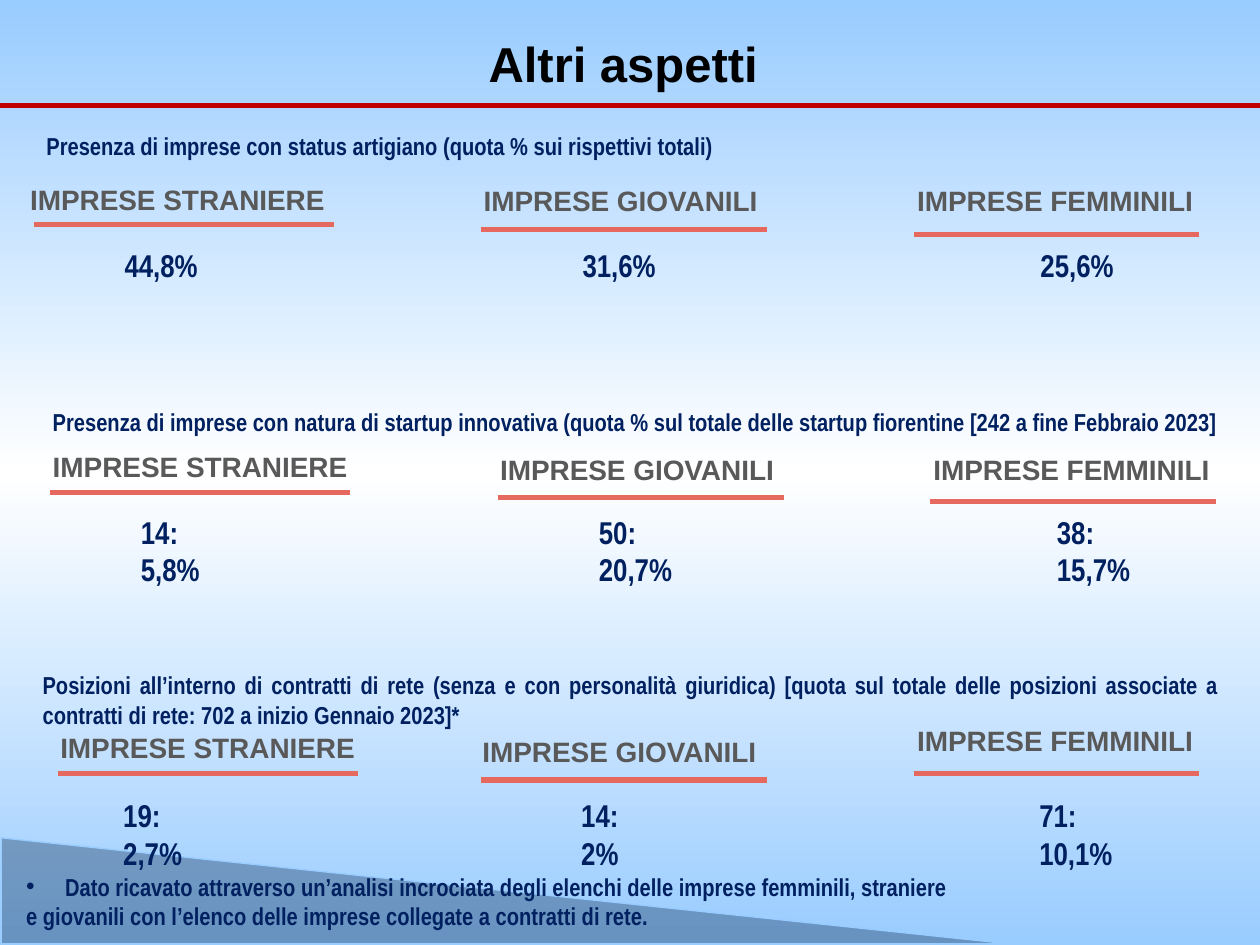
from copy import deepcopy
from dataclasses import dataclass
from lxml.etree import SubElement
from pptx import Presentation
from pptx.dml.color import RGBColor
from pptx.enum.shapes import MSO_CONNECTOR, MSO_SHAPE
from pptx.enum.text import MSO_ANCHOR, MSO_AUTO_SIZE, PP_ALIGN
from pptx.oxml.ns import qn
from pptx.slide import Slide
from pptx.util import Inches, Pt

COLUMNS, ROWS = 100, 75
WIDTH, HEIGHT = Inches(10), Inches(7.5)


def color(value):
    return RGBColor.from_string(value)


def across(columns):
    return round(WIDTH * columns / COLUMNS)


def down(rows):
    return round(HEIGHT * rows / ROWS)


@dataclass
class Board:
    page: Slide
    sky: str = "99CCFF"
    white: str = "FFFFFF"
    navy: str = "002060"
    gray: str = "595959"
    coral: str = "E6695F"
    red: str = "C00000"
    black: str = "000000"
    wedge_fill: str = "17375E"
    sans: str = "Arial"
    narrow: str = "Arial Narrow"

    def background(self):
        fill = self.page.background.fill
        fill.gradient()
        fill.gradient_angle = 90
        stops = self.page.element.find(".//" + qn("a:gsLst"))
        stops.insert(1, deepcopy(stops[0]))
        for stop, position, value in zip(
            fill.gradient_stops, (0, 0.5, 1), (self.sky, self.white, self.sky)
        ):
            stop.position = position
            stop.color.rgb = color(value)

    def wedge(self, left, top, width, height):
        shape = self.page.shapes.add_shape(
            MSO_SHAPE.RIGHT_TRIANGLE, across(left), down(top), across(width), down(height)
        )
        shape.shadow.inherit = False
        shape.fill.solid()
        shape.fill.fore_color.rgb = color(self.wedge_fill)
        tint = shape.element.spPr.find(qn("a:solidFill"))[0]
        SubElement(tint, qn("a:alpha"), val="38000")
        shape.line.color.rgb = color(self.sky)
        shape.line.width = Pt(0.75)

    def rule(self, left, top, width, value):
        line = self.page.shapes.add_connector(
            MSO_CONNECTOR.STRAIGHT, across(left), down(top), across(left + width), down(top)
        )
        line.line.color.rgb = color(value)
        line.line.width = Pt(3)
        SubElement(line.element.spPr, qn("a:effectLst"))

    def text(self, place, lines, size, font, value, align=PP_ALIGN.JUSTIFY, bullet=False):
        left, top, width, height = place
        box = self.page.shapes.add_textbox(across(left), down(top), across(width), down(height))
        frame = box.text_frame
        frame.word_wrap = True
        frame.auto_size = MSO_AUTO_SIZE.SHAPE_TO_FIT_TEXT
        for index, line in enumerate(lines):
            para = frame.add_paragraph() if index else frame.paragraphs[0]
            para.alignment = align
            if bullet and index == 0:
                self.bullet(para)
            span = para.add_run()
            span.text = line
            span.font.name = font
            span.font.size = Pt(size)
            span.font.bold = True
            span.font.color.rgb = color(value)
        return box

    def bullet(self, para):
        props = para._p.get_or_add_pPr()
        props.set("marL", str(across(3.1)))
        props.set("indent", str(-across(3.1)))
        SubElement(props, qn("a:buFont"), typeface=self.sans)
        SubElement(props, qn("a:buChar"), char="•")

    def title(self, line):
        box = self.text((0, 2.1, 100, 5.8), [line], 28, self.sans, self.black, PP_ALIGN.CENTER)
        box.text_frame.auto_size = MSO_AUTO_SIZE.NONE
        box.text_frame.vertical_anchor = MSO_ANCHOR.MIDDLE

    def note(self, place, lines, bullet=False):
        self.text(place, lines, 14, self.narrow, self.navy, bullet=bullet)

    def label(self, left, top, line):
        self.text((left, top, 26.2, 3.3), [line], 16, self.sans, self.gray, PP_ALIGN.LEFT)

    def figure(self, left, top, width, line):
        self.text((left, top, width, 4), [line], 18, self.narrow, self.navy)


GROUPS = ("IMPRESE STRANIERE", "IMPRESE GIOVANILI", "IMPRESE FEMMINILI")
RULE_WIDTHS = (23.8, 22.7, 22.7)
FIGURE_STEP = 36.35
SECTIONS = [
    {
        "place": (2.7, 9.9, 64.7, 3.4),
        "heading": "Presenza di imprese con status artigiano (quota % sui rispettivi totali)",
        "labels": ((1.4, 14), (37.4, 14.1), (71.8, 14.1)),
        "rules": ((2.7, 17.8), (38.2, 18.2), (72.5, 18.6)),
        "figures": (8.9, 19),
        "values": ("44,8%", "31,6%", "25,6%"),
    },
    {
        "place": (3.2, 31.8, 95.4, 3.4),
        "heading": "Presenza di imprese con natura di startup innovativa "
        "(quota % sul totale delle startup fiorentine [242 a fine Febbraio 2023]",
        "labels": ((3.2, 35.2), (38.7, 35.4), (73.1, 35.4)),
        "rules": ((4, 39.1), (39.5, 39.5), (73.8, 39.8)),
        "figures": (10.2, 40.2),
        "values": ("14: 5,8%", "50: 20,7%", "38: 15,7%"),
    },
    {
        "place": (2.4, 52.7, 95.4, 5.7),
        "heading": "Posizioni all’interno di contratti di rete (senza e con personalità giuridica) "
        "[quota sul totale delle posizioni associate a contratti di rete: "
        "702 a inizio Gennaio 2023]*",
        "labels": ((3.8, 57.5), (37.3, 57.8), (71.8, 56.9)),
        "rules": ((4.6, 61.4), (38.2, 61.9), (72.5, 61.4)),
        "figures": (8.8, 62.7),
        "values": ("19: 2,7%", "14: 2%", "71: 10,1%"),
    },
]
FOOTNOTE = [
    "Dato ricavato attraverso un’analisi incrociata degli elenchi delle imprese femminili, straniere ",
    "e giovanili con l’elenco delle imprese collegate a contratti di rete.",
]


def main():
    deck = Presentation()
    deck.slide_width, deck.slide_height = WIDTH, HEIGHT
    board = Board(deck.slides.add_slide(deck.slide_layouts[6]))
    board.background()
    board.title("Altri aspetti ")
    board.wedge(0.1, 66.5, 79.9, 8.4)
    board.rule(0, 8.4, COLUMNS, board.red)
    for section in SECTIONS:
        board.note(section["place"], [section["heading"]])
        left, top = section["figures"]
        for index, (group, value) in enumerate(zip(GROUPS, section["values"])):
            board.label(*section["labels"][index], group)
            board.rule(*section["rules"][index], RULE_WIDTHS[index], board.coral)
            width = 8 if value == "14: 2%" else 8.7
            board.figure(left + index * FIGURE_STEP, top, width, value)
    board.note((1.1, 68.7, 95.4, 5.7), FOOTNOTE, bullet=True)
    deck.save("out.pptx")


if __name__ == "__main__":
    main()
